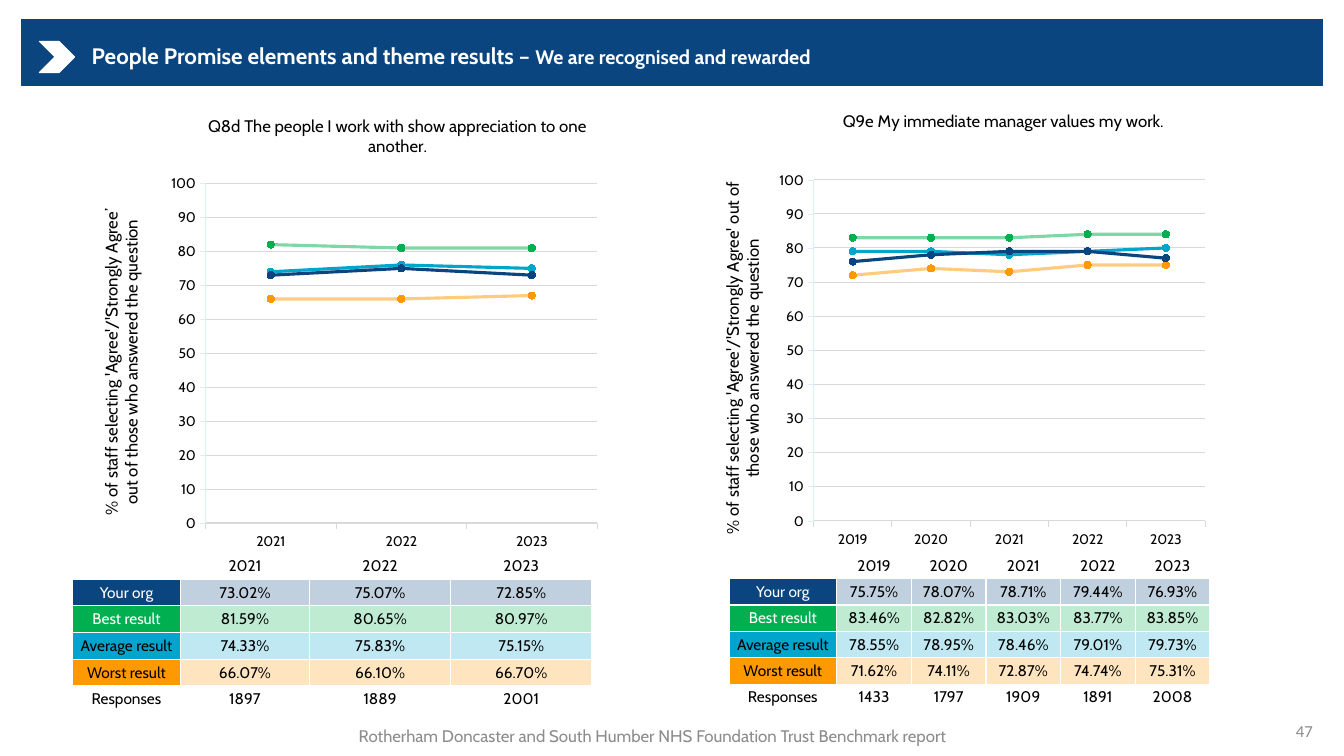
from lxml import etree
from pptx import Presentation
from pptx import util as u
from pptx.chart import data as cd
from pptx.dml import color as col
from pptx.enum import chart as ch, shapes, text
from pptx.oxml import ns

HEAD = [("People Promise elements and theme results – ", 16), ("We are recognised and rewarded", 14)]
FOOT = "Rotherham Doncaster and South Humber NHS Foundation Trust Benchmark report"
PAGE = "47"
ROWS = ["Your org", "Best result", "Average result", "Worst result"]
ORDER = ["Average result", "Best result", "Worst result", "Your org"]
SOFT = ["Best result", "Worst result"]
PANELS = [
    {
        "title": "Q8d The people I work with show appreciation to one another.",
        "axis": "% of staff selecting 'Agree'/'Strongly Agree’\nout of those who answered the question",
        "years": ["2021", "2022", "2023"],
        "vals": [[73.02, 75.07, 72.85], [81.59, 80.65, 80.97],
                 [74.33, 75.83, 75.15], [66.07, 66.10, 66.70]],
        "count": [1897, 1889, 2001],
        "chart": (0.96, 1.02, 5.29, 4.45),
        "plot": (0.204, 0.18, 0.734, 0.757),
        "head": (0.203, 0.019), "side": (0, 0.23),
        "table": (0.72, 5.48, 5.15, 1.59),
        "cols": [1.07, 1.28, 1.4, 1.4],
    },
    {
        "title": "Q9e My immediate manager values my work.",
        "axis": "% of staff selecting 'Agree'/'Strongly Agree' out of those who answered the question",
        "years": ["2019", "2020", "2021", "2022", "2023"],
        "vals": [[75.75, 78.07, 78.71, 79.44, 76.93], [83.46, 82.82, 83.03, 83.77, 83.85],
                 [78.55, 78.95, 78.46, 79.01, 79.73], [71.62, 74.11, 72.87, 74.74, 75.31]],
        "count": [1433, 1797, 1909, 1891, 2008],
        "chart": (6.99, 0.92, 5.29, 4.51),
        "plot": (0.204, 0.193, 0.734, 0.756),
        "head": (0.253, 0.031), "side": (0.025, 0.197),
        "table": (7.23, 5.48, 4.77, 1.57),
        "cols": [1.07] + [0.74] * 5,
    },
]
THEME = {
    "font": "Cabin", "num": "Calibri", "ink": "000000", "pale": "FFFFFF", "grey": "8C8C8C",
    "grid": "D9D9D9", "axis": "DBEFF9", "band": "0B457F",
    "tick": 10, "cell": 11, "note": 12,
    "rows": dict(zip(ROWS, ["0B457F", "00B050", "00A5CC", "FF9900"])),
}


def rgb(code):
    return col.RGBColor.from_string(code)


def style(font, size, ink=THEME["ink"], name=THEME["font"], bold=False):
    for key, val in {"size": u.Pt(size), "name": name, "bold": bold}.items():
        setattr(font, key, val)
    font.color.rgb = rgb(ink)


def paint(fill, code):
    fill.solid()
    fill.fore_color.rgb = rgb(code)


def stroke(line, code, width):
    paint(line.fill, code)
    line.width = u.Pt(width)


def fade(node, part):
    for clr in node.xpath(".//a:solidFill/a:srgbClr"):
        etree.SubElement(clr, ns.qn("a:alpha")).set("val", str(part * 1000))


def place(node, spot, index):
    for old in node.findall(ns.qn("c:layout")):
        node.remove(old)
    lay = etree.Element(ns.qn("c:layout"))
    man = etree.SubElement(lay, ns.qn("c:manualLayout"))
    pairs = [("xMode", "edge"), ("yMode", "edge")] + list(zip("xywh", spot))
    if len(spot) == 4:
        pairs.insert(0, ("layoutTarget", "inner"))
    for tag, val in pairs:
        etree.SubElement(man, ns.qn("c:" + tag)).set("val", str(val))
    node.insert(index, lay)


def label(frame, words):
    frame.text = words
    for para in frame.paragraphs:
        for run in para.runs:
            style(run.font, THEME["note"])


def draw_chart(slide, panel):
    data = cd.CategoryChartData(number_format="0")
    data.categories = panel["years"]
    for name in ORDER:
        data.add_series(name, [round(v) for v in panel["vals"][ROWS.index(name)]])
    chart = slide.shapes.add_chart(
        ch.XL_CHART_TYPE.LINE_MARKERS, *map(u.Inches, panel["chart"]), data).chart
    style(chart.font, THEME["tick"])
    chart.has_legend = False
    chart.plots[0].vary_by_categories = False
    for ser in chart.plots[0].series:
        code = THEME["rows"][ser.name]
        ser.smooth = False
        stroke(ser.format.line, code, 2.25)
        if ser.name in SOFT:
            fade(ser.format.line._get_or_add_ln(), 50)
        ser.marker.style, ser.marker.size = ch.XL_MARKER_STYLE.CIRCLE, 5
        paint(ser.marker.format.fill, code)
        stroke(ser.marker.format.line, code, 0.75)
    cat, val = chart.category_axis, chart.value_axis
    for axis, code, width in [(cat, THEME["grid"], 0.75), (val, THEME["axis"], 0.25)]:
        axis.major_tick_mark = ch.XL_TICK_MARK.OUTSIDE
        style(axis.tick_labels.font, THEME["tick"])
        stroke(axis.format.line, code, width)
    for key, num in {"minimum_scale": 0, "maximum_scale": 100, "major_unit": 10}.items():
        setattr(val, key, num)
    stroke(val.major_gridlines.format.line, THEME["grid"], 0.75)
    label(chart.chart_title.text_frame, panel["title"])
    label(val.axis_title.text_frame, panel["axis"])
    root = chart._chartSpace
    place(root.xpath("c:chart/c:plotArea")[0], panel["plot"], 0)
    place(root.xpath("c:chart/c:title")[0], panel["head"], 1)
    side = root.xpath(".//c:valAx/c:title")[0]
    place(side, panel["side"], 1)
    body = side.xpath(".//a:bodyPr")[0]
    body.set("rot", "-5400000")
    body.set("vert", "horz")


def draw_table(slide, panel):
    grid = [[""] + panel["years"]]
    grid += [[name] + [f"{v:.2f}%" for v in vals] for name, vals in zip(ROWS, panel["vals"])]
    grid.append(["Responses"] + [str(n) for n in panel["count"]])
    table = slide.shapes.add_table(
        len(grid), len(grid[0]), *map(u.Inches, panel["table"])).table
    table.horz_banding = False
    for column, width in zip(table.columns, panel["cols"]):
        column.width = u.Inches(width)
    for r, row in enumerate(grid):
        code = THEME["rows"].get(row[0])
        for c, words in enumerate(row):
            cell = table.cell(r, c)
            for edge in ("left", "right", "top", "bottom"):
                setattr(cell, "margin_" + edge, 0)
            cell.vertical_anchor = text.MSO_ANCHOR.MIDDLE
            cell.text = words
            para = cell.text_frame.paragraphs[0]
            para.alignment = text.PP_ALIGN.CENTER
            light = c == 0 and row[0] in ROWS[:2]
            style(para.font, THEME["cell"])
            for run in para.runs:
                style(run.font, THEME["cell"], THEME["pale" if light else "ink"])
            if code:
                paint(cell.fill, code)
                if c:
                    fade(cell._tc.tcPr, 25)
            else:
                cell.fill.background()


def draw_head(slide):
    title = slide.shapes.title
    kinds = shapes.MSO_SHAPE
    for kind, box, code in [(kinds.RECTANGLE, (0.21, 0.19, 12.91, 0.66), THEME["band"]),
                            (kinds.CHEVRON, (0.39, 0.41, 0.35, 0.31), THEME["pale"])]:
        mark = slide.shapes.add_shape(kind, *map(u.Inches, box))
        mark.shadow.inherit = False
        paint(mark.fill, code)
        stroke(mark.line, code, 0.75)
        title.element.addprevious(mark.element)
    for key, num in zip(("left", "top", "width", "height"), (0.81, 0.35, 9.61, 0.44)):
        setattr(title, key, u.Inches(num))
    title.text_frame.vertical_anchor = text.MSO_ANCHOR.MIDDLE
    para = title.text_frame.paragraphs[0]
    para.alignment, para.line_spacing = text.PP_ALIGN.LEFT, 0.9
    for words, size in HEAD:
        run = para.add_run()
        run.text = words
        style(run.font, size, THEME["pale"], bold=True)


def draw_note(slide, words, box, align, name):
    frame = slide.shapes.add_textbox(*map(u.Inches, box)).text_frame
    frame.word_wrap = True
    frame.vertical_anchor = text.MSO_ANCHOR.MIDDLE
    para = frame.paragraphs[0]
    para.alignment = align
    run = para.add_run()
    run.text = words
    style(run.font, THEME["note"], THEME["grey"], name)


def main():
    deck = Presentation()
    deck.slide_width, deck.slide_height = u.Inches(13.33), u.Inches(7.5)
    slide = deck.slides.add_slide(deck.slide_layouts[5])
    draw_head(slide)
    for panel in PANELS:
        draw_chart(slide, panel)
        draw_table(slide, panel)
    draw_note(slide, PAGE, (10.12, 7.05, 3, 0.4), text.PP_ALIGN.RIGHT, THEME["num"])
    draw_note(slide, FOOT, (2.95, 7.1, 7.05, 0.39), text.PP_ALIGN.CENTER, THEME["font"])
    deck.save("out.pptx")


if __name__ == "__main__":
    main()
